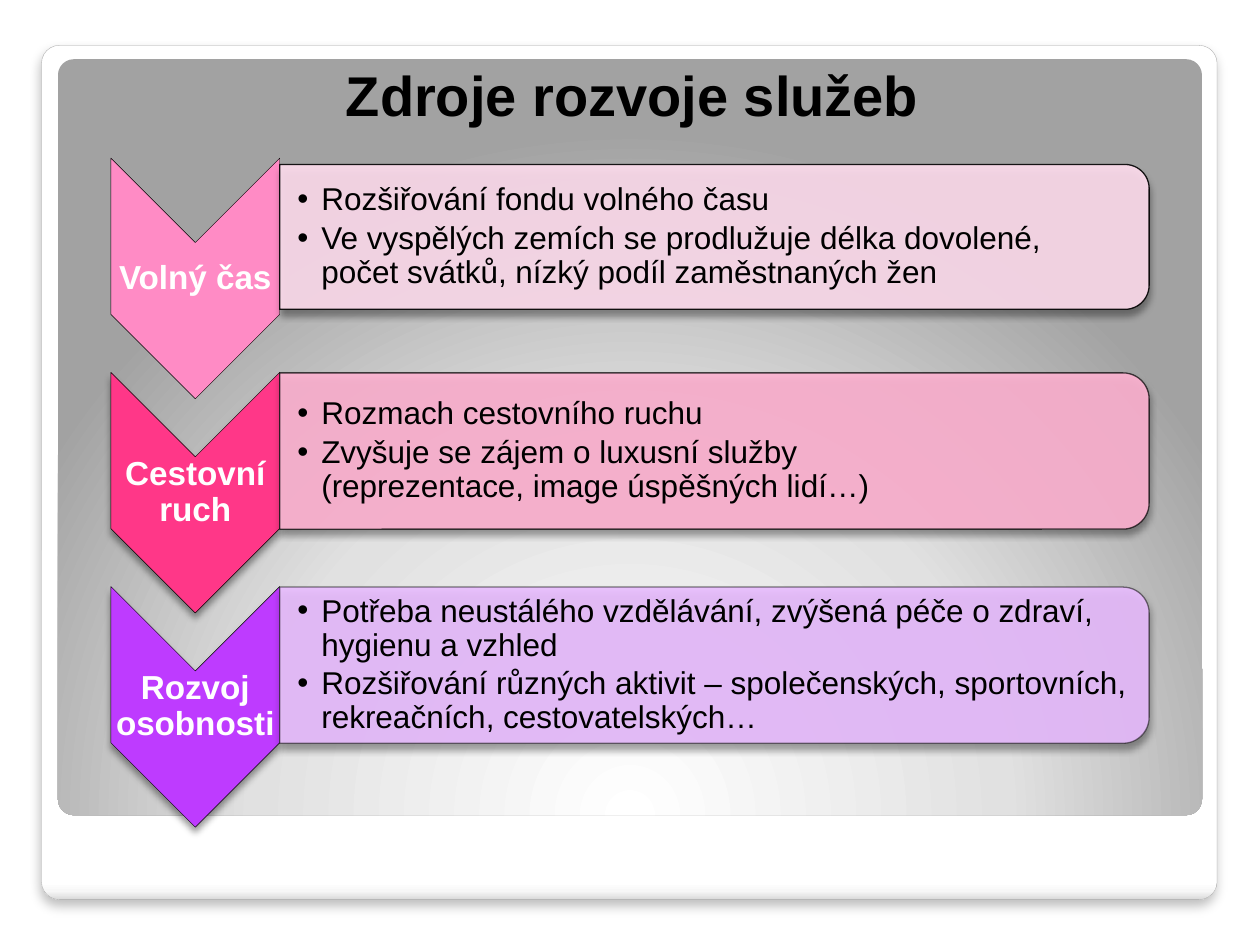
from dataclasses import dataclass

from lxml import etree
from pptx import Presentation
from pptx.dml.color import RGBColor
from pptx.enum.shapes import MSO_SHAPE
from pptx.enum.text import MSO_ANCHOR, PP_ALIGN
from pptx.oxml import parse_xml
from pptx.oxml.ns import nsdecls, qn
from pptx.util import Emu, Inches, Pt

SLIDE_WIDTH, SLIDE_HEIGHT = 10, 7.5
ROW_PITCH = 1.7
FIRST_CENTER = 1.88
CHEVRON_LEFT, CHEVRON_WIDTH, CHEVRON_HEIGHT = 0.88, 1.34, 1.91
CHEVRON_DROP = 0.33
PANEL_LEFT, PANEL_WIDTH = CHEVRON_LEFT + CHEVRON_WIDTH, 6.9
PADDING = 0.01
FONT = "Arial"


@dataclass
class Box:
    left: float
    top: float
    width: float
    height: float

    def emu(self) -> list[Emu]:
        return [Inches(v) for v in (self.left, self.top, self.width, self.height)]

    def turned(self) -> "Box":
        """Unrotated frame that fills this box after a quarter turn."""
        shift = (self.width - self.height) / 2
        return Box(self.left + shift, self.top - shift, self.height, self.width)


@dataclass
class Source:
    label: str
    points: list[str]
    chevron_color: str
    panel_color: str
    panel_height: float = 1.24
    line_opacity: int = 70
    chevron_shadow: bool = True


SOURCES = [
    Source("Volný čas",
           ["Rozšiřování fondu volného času",
            "Ve vyspělých zemích se prodlužuje délka dovolené, \n"
            "počet svátků, nízký podíl zaměstnaných žen"],
           "FF8BC5", "FFDDEE", 1.15, 90, False),
    Source("Cestovní ruch",
           ["Rozmach cestovního ruchu",
            "Zvyšuje se zájem o luxusní služby \n"
            "(reprezentace, image úspěšných lidí…)"],
           "FF3788", "FFB3D2"),
    Source("Rozvoj osobnosti",
           ["Potřeba neustálého vzdělávání, zvýšená péče o zdraví, hygienu a vzhled",
            "Rozšiřování různých aktivit – společenských, sportovních, "
            "rekreačních, cestovatelských…"],
           "BE3BFF", "E9BDFF", line_opacity=50),
]


def color(hex_code: str) -> RGBColor:
    return RGBColor.from_string(hex_code)


def set_opacity(fill, percent: int) -> None:
    rgb = fill._xPr.find(f"{qn('a:solidFill')}/{qn('a:srgbClr')}")
    etree.SubElement(rgb, qn("a:alpha"), val=str(percent * 1000))


def set_gradient(shape, stops: list[tuple[int, str]], direction: str) -> None:
    stop_xml = "".join(f'<a:gs pos="{pos * 1000}"><a:srgbClr val="{hex_code}"/></a:gs>'
                       for pos, hex_code in stops)
    shape._element.spPr.find(qn("a:prstGeom")).addnext(parse_xml(
        f'<a:gradFill {nsdecls("a")} rotWithShape="1"><a:gsLst>{stop_xml}</a:gsLst>'
        f"{direction}</a:gradFill>"))


def add_shadow(shape, opacity: int = 40, blur: float = 4, distance: float = 3) -> None:
    effects = shape._element.spPr.find(qn("a:effectLst"))
    effects.append(parse_xml(
        f'<a:outerShdw {nsdecls("a")} blurRad="{Pt(blur)}" dist="{Pt(distance)}" '
        f'dir="5400000" rotWithShape="0"><a:srgbClr val="000000">'
        f'<a:alpha val="{opacity * 1000}"/></a:srgbClr></a:outerShdw>'))


def add_frame(slide, box: Box):
    frame = slide.shapes.add_shape(MSO_SHAPE.ROUNDED_RECTANGLE, *box.emu())
    frame.adjustments[0] = 0.021
    frame.shadow.inherit = False
    frame.line.fill.background()
    return frame


def add_background(slide) -> None:
    card = add_frame(slide, Box(0.33, 0.36, 9.33, 6.78))
    set_gradient(card, [(0, "FFFFFF"), (98, "FFFFFF"), (99, "F7F7F7"), (100, "DADADA")],
                 '<a:lin ang="5400000" scaled="0"/>')
    card.line.color.rgb = color("A4A4A4")
    card.line.width = Pt(0.16)
    add_shadow(card, 25, 6, 4)
    glow = add_frame(slide, Box(0.46, 0.47, 9.08, 6))
    set_gradient(glow, [(0, "FFFFFF"), (55, "E1E1E1"), (100, "A2A2A2")],
                 '<a:path path="circle"><a:fillToRect l="50000" t="175000" '
                 'r="50000" b="-75000"/></a:path>')


def add_title(slide, wording: str) -> None:
    title = slide.shapes.title
    title.left, title.top, title.width, title.height = Box(1.18, 0.39, 7.68, 0.67).emu()
    title.text_frame.text = wording
    title.text_frame.vertical_anchor = MSO_ANCHOR.BOTTOM
    paragraph = title.text_frame.paragraphs[0]
    paragraph.alignment = PP_ALIGN.CENTER
    format_font(paragraph, 32, "000000", bold=True)
    slide.shapes._spTree.append(title._element)  # bring in front of the background


def format_font(paragraph, size: float, hex_code: str, bold: bool = False) -> None:
    font = paragraph.font
    font.name, font.size, font.bold = FONT, Pt(size), bold
    font.color.rgb = color(hex_code)


def add_turned_shape(slide, kind: MSO_SHAPE, box: Box, hex_code: str, line_width: float):
    shape = slide.shapes.add_shape(kind, *box.turned().emu())
    shape.rotation = 90
    shape.shadow.inherit = False
    shape.fill.solid()
    shape.fill.fore_color.rgb = color(hex_code)
    shape.line.color.rgb = color("000000")
    shape.line.width = Pt(line_width)
    return shape


def add_text(slide, box: Box, lines: list[str], left_inset: float = PADDING):
    frame = slide.shapes.add_textbox(*box.emu()).text_frame
    frame.word_wrap = True
    frame.vertical_anchor = MSO_ANCHOR.MIDDLE
    frame.margin_left = Inches(left_inset)
    frame.margin_right = frame.margin_top = frame.margin_bottom = Inches(PADDING)
    for index, line in enumerate(lines):
        paragraph = frame.add_paragraph() if index else frame.paragraphs[0]
        paragraph.text = line
        paragraph.line_spacing = 0.9
    return frame.paragraphs


def add_bullet(paragraph) -> None:
    properties = paragraph._p.get_or_add_pPr()
    properties.set("marL", str(Inches(0.19)))
    properties.set("indent", str(Inches(-0.19)))
    etree.SubElement(properties, qn("a:buFont"), typeface=FONT)
    etree.SubElement(properties, qn("a:buChar"), char="•")


def add_source(slide, source: Source, center: float) -> None:
    chevron_center = center + CHEVRON_DROP
    chevron = add_turned_shape(
        slide, MSO_SHAPE.CHEVRON,
        Box(CHEVRON_LEFT, chevron_center - CHEVRON_HEIGHT / 2, CHEVRON_WIDTH, CHEVRON_HEIGHT),
        source.chevron_color, 0.25)
    if source.chevron_shadow:
        add_shadow(chevron)
    label_box = Box(CHEVRON_LEFT, chevron_center - 0.285, CHEVRON_WIDTH, 0.57)
    for paragraph in add_text(slide, label_box, [source.label]):
        paragraph.alignment = PP_ALIGN.CENTER
        format_font(paragraph, 19, "FFFFFF", bold=True)

    height = source.panel_height
    panel = add_turned_shape(
        slide, MSO_SHAPE.ROUND_2_SAME_RECTANGLE,
        Box(PANEL_LEFT, center - height / 2, PANEL_WIDTH, height), source.panel_color, 0.75)
    set_opacity(panel.fill, 90)
    set_opacity(panel.line.fill, source.line_opacity)
    add_shadow(panel)
    text_height = height - 0.12
    points_box = Box(PANEL_LEFT, center - text_height / 2, PANEL_WIDTH - 0.06, text_height)
    for paragraph in add_text(slide, points_box, source.points, left_inset=0.14):
        paragraph.level = 1
        paragraph.space_after = Pt(2.7)
        format_font(paragraph, 18, "000000")
        add_bullet(paragraph)


def main() -> None:
    deck = Presentation()
    deck.slide_width, deck.slide_height = Inches(SLIDE_WIDTH), Inches(SLIDE_HEIGHT)
    slide = deck.slides.add_slide(deck.slide_layouts[5])
    add_background(slide)
    add_title(slide, "Zdroje rozvoje služeb")
    for row, source in enumerate(SOURCES):
        add_source(slide, source, FIRST_CENTER + row * ROW_PITCH)
    deck.save("out.pptx")


if __name__ == "__main__":
    main()
